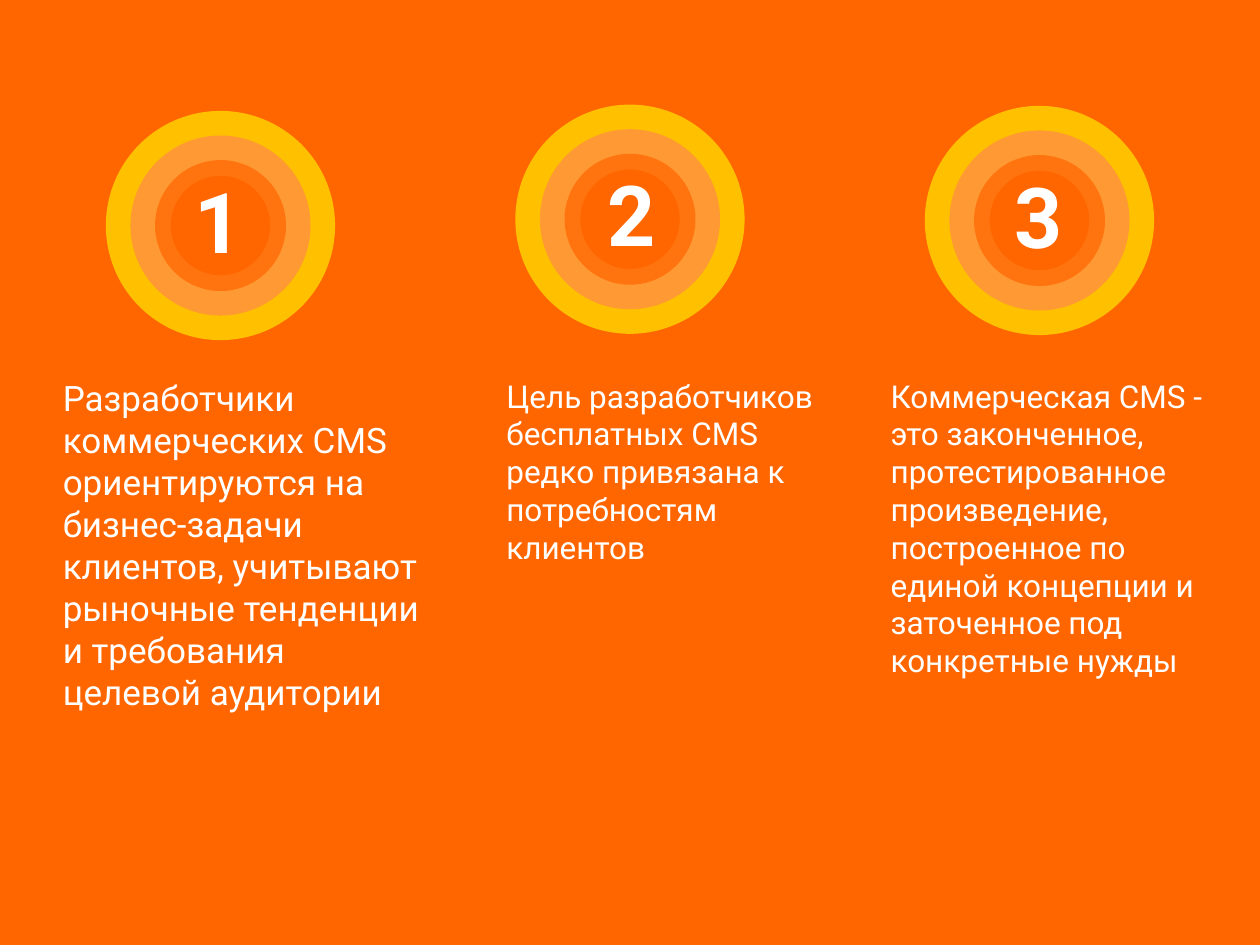
from lxml import etree
from pptx import Presentation
from pptx.dml.color import RGBColor
from pptx.enum.shapes import MSO_SHAPE
from pptx.enum.text import MSO_AUTO_SIZE
from pptx.oxml.ns import qn
from pptx.util import Inches, Pt

OVAL = MSO_SHAPE.OVAL
GROW = MSO_AUTO_SIZE.SHAPE_TO_FIT_TEXT
ORANGE, PEACH, GOLD, WHITE = "FF6600", "FF9933", "FFC000", "FFFFFF"
COLUMNS, ROWS = 10, 7.5
FIRST_CENTER, CENTER_GAP = 1.75, 3.25
TEXT_TOP = 2.94
RINGS = [(1.5, GOLD, 100), (1.11, PEACH, 100), (0.72, ORANGE, 71)]

# center row, numeral left and top, then text left, width, height and size
POINTS = [
    (1.79, 1.49, 1.39, 0.4, 3.03, 3.47, 20,
     "Разработчики коммерческих CMS ориентируются на бизнес-задачи клиентов, "
     "учитывают рыночные тенденции и требования целевой аудитории"),
    (1.74, 4.77, 1.33, 3.92, 2.71, 1.92, 18,
     "Цель разработчиков бесплатных CMS редко привязана к потребностям клиентов"),
    (1.75, 8, 1.35, 6.97, 2.68, 2.52, 18,
     "Коммерческая CMS - это законченное, протестированное произведение, "
     "построенное по единой концепции и заточенное под конкретные нужды"),
]


def color(value):
    return RGBColor.from_string(value)


def write(frame, text, size=18, bold=False, line_spacing=None, tracking=None):
    paragraph = frame.paragraphs[0]
    if line_spacing:
        paragraph.line_spacing = line_spacing
    run = paragraph.add_run()
    run.text = text
    run.font.name = "Roboto"
    run.font.size = Pt(size)
    run.font.bold = bold
    run.font.color.rgb = color(WHITE)
    if tracking:
        run.font._element.set("spc", str(round(tracking * 100)))


class Deck:
    """Holds the presentation, its grid and the current slide."""

    def __init__(self):
        self.presentation = Presentation()
        self.presentation.slide_width = Inches(COLUMNS)
        self.presentation.slide_height = Inches(ROWS)
        self.column = self.presentation.slide_width / COLUMNS
        self.row = self.presentation.slide_height / ROWS
        self.slide = self.presentation.slides.add_slide(self.presentation.slide_layouts[6])
        background = self.slide.background.fill
        background.solid()
        background.fore_color.rgb = color(ORANGE)

    def place(self, left, top, width, height):
        return (round(left * self.column), round(top * self.row),
                round(width * self.column), round(height * self.row))

    def circle(self, center, middle, width, height, line, weight, fill=None, opacity=100):
        box = self.place(center - width / 2, middle - height / 2, width, height)
        shape = self.slide.shapes.add_shape(OVAL, *box)
        shape.shadow.inherit = False
        if fill:
            shape.fill.solid()
            shape.fill.fore_color.rgb = color(fill)
        else:
            shape.fill.background()
        shape.line.color.rgb = color(line)
        shape.line.width = Pt(weight)
        if opacity < 100:
            tint = shape.line._ln.find(".//" + qn("a:srgbClr"))
            etree.SubElement(tint, qn("a:alpha")).set("val", str(opacity * 1000))

    def target(self, center, middle):
        self.circle(center, middle, 0.83, 0.8, ORANGE, 2, fill=ORANGE)
        for size, line, opacity in RINGS:
            self.circle(center, middle, size, size, line, 23, opacity=opacity)

    def text(self, left, top, width, height, text, wrap=True, inset=0.1, **style):
        box = self.slide.shapes.add_textbox(*self.place(left, top, width, height))
        frame = box.text_frame
        frame.word_wrap = wrap
        frame.auto_size = GROW
        frame.margin_left = frame.margin_right = Inches(inset)
        write(frame, text, **style)


def main():
    deck = Deck()
    for index, point in enumerate(POINTS):
        middle, number_left, number_top, left, width, height, size, text = point
        deck.target(FIRST_CENTER + index * CENTER_GAP, middle)
        deck.text(number_left, number_top, 0.51, 0.83, str(index + 1), wrap=False,
                  inset=0.05, size=48, bold=True, line_spacing=0.9, tracking=0.9)
        deck.text(left, TEXT_TOP, width, height, text, size=size)
    deck.presentation.save("out.pptx")


if __name__ == "__main__":
    main()
